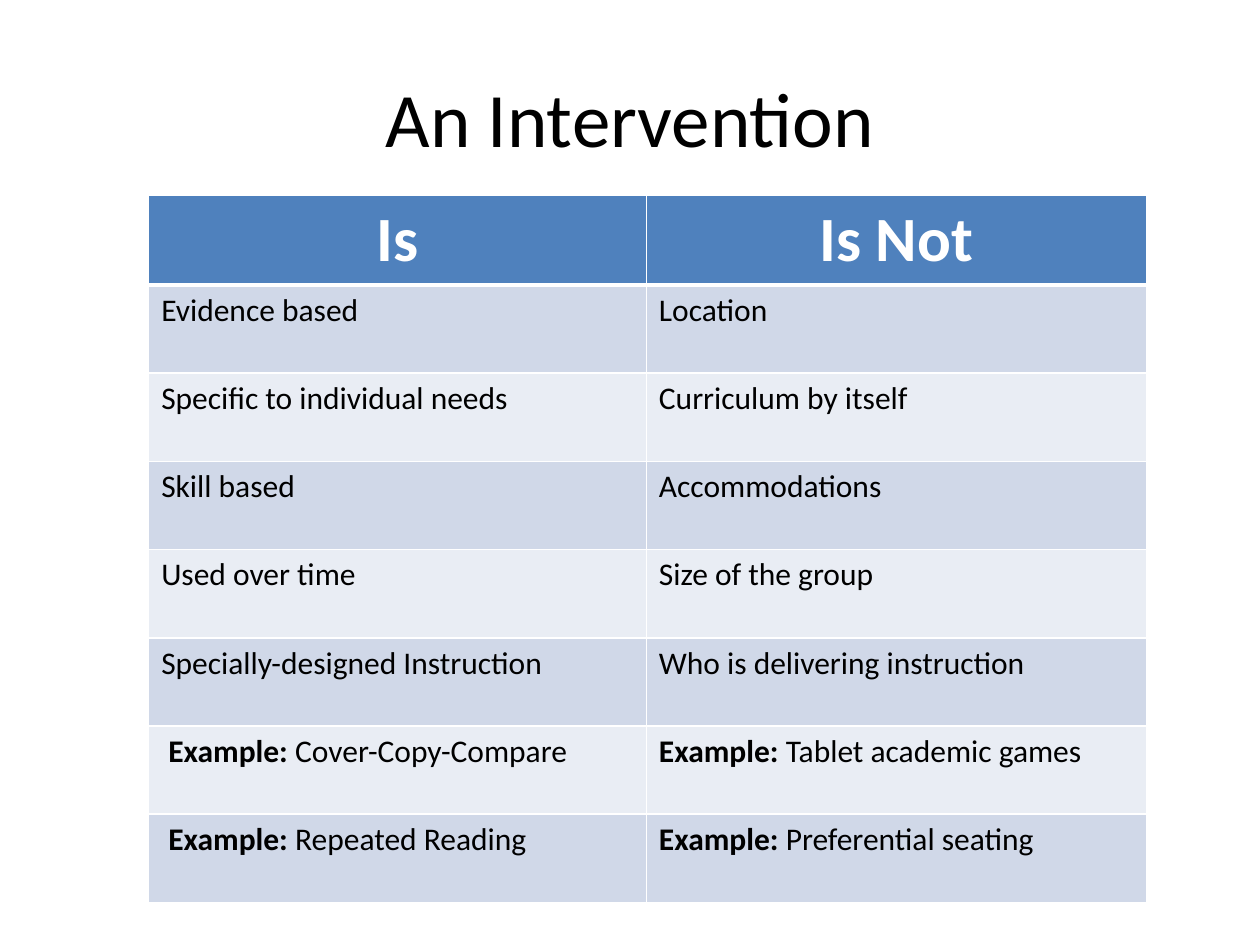
from dataclasses import dataclass

from lxml import etree
from pptx import Presentation
from pptx import util as u
from pptx.dml.color import RGBColor
from pptx.enum import text
from pptx.oxml import ns

PX = 9144  # EMU per px, 100 px to the inch
FONT = "Calibri"
COLOURS = {
    "ink": "000000",
    "paper": "FFFFFF",
    "header": "4F81BD",
    "odd": "D0D8E8",
    "even": "E9EDF4",
}


@dataclass(frozen=True)
class Entry:
    """One body cell: plain words after an optional bold label."""
    words: str
    label: str = ""


HEADINGS = ("Is", "Is Not")
ENTRIES = [
    (Entry("Evidence based"), Entry("Location")),
    (Entry("Specific to individual needs"), Entry("Curriculum by itself")),
    (Entry("Skill based"), Entry("Accommodations")),
    (Entry("Used over time"), Entry("Size of the group")),
    (Entry("Specially-designed Instruction"), Entry("Who is delivering instruction")),
    (Entry("Cover-Copy-Compare", " Example: "), Entry("Tablet academic games", "Example: ")),
    (Entry("Repeated Reading", " Example: "), Entry("Preferential seating", "Example: ")),
]
COLUMN_WIDTHS = (395, 397)
ROW_HEIGHT = 70


def place(item, left: int, top: int, width: int, height: int) -> None:
    box = {"left": left, "top": top, "width": width, "height": height}
    for side, length in box.items():
        setattr(item, side, u.Emu(length * PX))


def add_run(paragraph, words: str, size: int, colour: str, bold: bool = False) -> None:
    run = paragraph.add_run()
    run.text = words
    for name, value in {"name": FONT, "size": u.Pt(size), "bold": bold}.items():
        setattr(run.font, name, value)
    run.font.color.rgb = RGBColor.from_string(COLOURS[colour])


def rule_cell(cell, widths: dict[str, int]) -> None:
    """Draw the cell's borders, given in points by side; they precede its fill."""
    properties = cell._tc.get_or_add_tcPr()
    for index, (side, points) in enumerate(widths.items()):
        line = etree.Element(ns.qn(f"a:ln{side}"), w=str(u.Pt(points)))
        fill = etree.SubElement(line, ns.qn("a:solidFill"))
        etree.SubElement(fill, ns.qn("a:srgbClr"), val=COLOURS["paper"])
        properties.insert(index, line)


def paint_cell(cell, fill: str, top: int = 1, bottom: int = 1) -> None:
    cell.fill.solid()
    cell.fill.fore_color.rgb = RGBColor.from_string(COLOURS[fill])
    rule_cell(cell, {"L": 1, "R": 1, "T": top, "B": bottom})


def add_comparison(slide) -> None:
    row_count = len(ENTRIES) + 1
    frame = slide.shapes.add_table(row_count, len(HEADINGS), 0, 0, 0, 0)
    place(frame, 118, 155, sum(COLUMN_WIDTHS), row_count * ROW_HEIGHT)
    table = frame.table
    for column, width in zip(table.columns, COLUMN_WIDTHS):
        column.width = u.Emu(width * PX)
    for row in table.rows:
        row.height = u.Emu(ROW_HEIGHT * PX)

    for column, heading in enumerate(HEADINGS):
        cell = table.cell(0, column)
        paint_cell(cell, "header", bottom=3)
        paragraph = cell.text_frame.paragraphs[0]
        paragraph.alignment = text.PP_ALIGN.CENTER
        add_run(paragraph, heading, 36, "paper", bold=True)

    for row, entries in enumerate(ENTRIES, start=1):
        for column, entry in enumerate(entries):
            cell = table.cell(row, column)
            paint_cell(cell, "odd" if row % 2 else "even", top=3 if row == 1 else 1)
            paragraph = cell.text_frame.paragraphs[0]
            if entry.label:
                add_run(paragraph, entry.label, 18, "ink", bold=True)
            add_run(paragraph, entry.words, 18, "ink")


def main() -> None:
    deck = Presentation()
    deck.slide_width, deck.slide_height = u.Emu(1000 * PX), u.Emu(750 * PX)
    slide = deck.slides.add_slide(deck.slide_layouts[5])

    title = slide.shapes.title
    place(title, 50, 30, 900, 125)
    title.text_frame.vertical_anchor = text.MSO_ANCHOR.MIDDLE
    heading = title.text_frame.paragraphs[0]
    heading.alignment = text.PP_ALIGN.CENTER
    add_run(heading, "An Intervention", 44, "ink")

    add_comparison(slide)
    deck.save("out.pptx")


if __name__ == "__main__":
    main()
